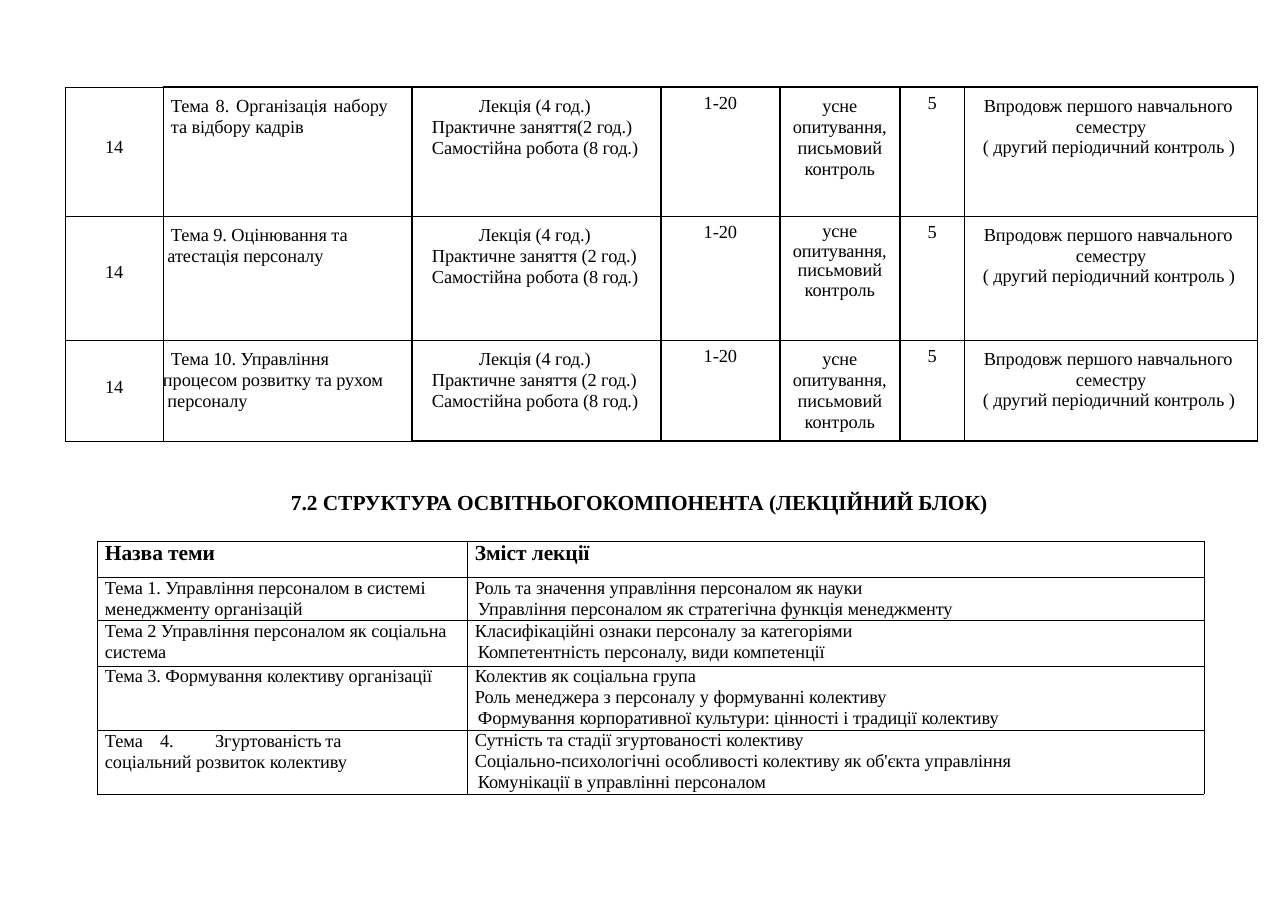
from copy import deepcopy

from lxml.etree import SubElement
from pptx import Presentation
from pptx.dml.color import RGBColor
from pptx.enum.text import PP_ALIGN as Align
from pptx.oxml.ns import qn
from pptx.util import Pt

EMU_PER_PX = 8300
BLACK, WHITE = "000000", "FFFFFF"


def px(length):
    return length * EMU_PER_PX


def color(value):
    return RGBColor.from_string(value)


def para(text, left=0, first=0, right=0, align=Align.LEFT, spacing=Pt(13.8),
         size=12, bold=False, tabs=()):
    """Describe one paragraph; a newline in the text is a line break."""
    return dict(text=text, left=left, first=first, right=right, align=align,
                spacing=spacing, size=size, bold=bold, tabs=tabs)


class SyllabusSlide:
    font = "Times New Roman"
    letter_spacing = "-5"

    def __init__(self, presentation):
        self.slide = presentation.slides.add_slide(presentation.slide_layouts[6])
        background = self.slide.background.fill
        background.solid()
        background.fore_color.rgb = color(WHITE)

    def fill_text(self, frame, paragraphs):
        frame.word_wrap = True
        for index, item in enumerate(paragraphs):
            paragraph = frame.add_paragraph() if index else frame.paragraphs[0]
            paragraph.alignment = item["align"]
            paragraph.line_spacing = item["spacing"]
            properties = paragraph._p.get_or_add_pPr()
            properties.set("marL", str(px(item["left"])))
            properties.set("marR", str(px(item["right"])))
            properties.set("indent", str(px(item["first"])))
            if item["tabs"]:
                tab_list = SubElement(properties, qn("a:tabLst"))
                for position in item["tabs"]:
                    SubElement(tab_list, qn("a:tab"), pos=str(px(position)), algn="l")
            for number, line in enumerate(item["text"].split("\n")):
                if number:
                    paragraph.add_line_break()
                    paragraph._p[-1].append(deepcopy(run._r.rPr))
                run = paragraph.add_run()
                run.text = line
                run.font.name = self.font
                run.font.size = Pt(item["size"])
                run.font.bold = item["bold"]
                run.font.color.rgb = color(BLACK)
                run._r.get_or_add_rPr().set("spc", self.letter_spacing)

    def text(self, left, top, width, height, inset, paragraphs):
        box = self.slide.shapes.add_textbox(px(left), px(top), px(width), px(height))
        frame = box.text_frame
        frame.margin_left = frame.margin_right = frame.margin_bottom = 0
        frame.margin_top = px(inset)
        self.fill_text(frame, paragraphs)

    def border(self, cell, widths):
        properties = cell._tc.get_or_add_tcPr()
        for side, width in zip("LRTB", widths):
            line = SubElement(properties, qn(f"a:ln{side}"), w=str(Pt(width)))
            fill = SubElement(line, qn("a:solidFill"))
            SubElement(fill, qn("a:srgbClr"), val=BLACK)

    def table(self, left, top, columns, heights, rows, borders):
        """Each cell is a pair: top inset and paragraphs."""
        frame = self.slide.shapes.add_table(
            len(heights), len(columns), px(left), px(top),
            px(sum(columns)), px(sum(heights)))
        table = frame.table
        table.first_row = table.horz_banding = False
        for column, width in zip(table.columns, columns):
            column.width = px(width)
        for row, height in zip(table.rows, heights):
            row.height = px(height)
        for r, contents in enumerate(rows):
            for c, (inset, paragraphs) in enumerate(contents):
                cell = table.cell(r, c)
                cell.margin_left = cell.margin_right = cell.margin_bottom = 0
                cell.margin_top = px(inset)
                self.fill_text(cell.text_frame, paragraphs)
                self.border(cell, borders(r, c))
                cell.fill.solid()
                cell.fill.fore_color.rgb = color(WHITE)


def schedule_row(hours_inset, topic, practice, method_inset, method_spacing):
    centred = dict(align=Align.CENTER, spacing=1.0)
    return [
        (hours_inset, [para("14", left=40, spacing=1.0)]),
        (8, [topic]),
        (8, [para(f"Лекція (4 год.)\n{practice}\nСамостійна робота (8 год.)",
                  left=20, first=47)]),
        (6, [para("1-20", **centred)]),
        (method_inset, [para("усне\nопитування,\nписьмовий\nконтроль",
                             align=Align.CENTER, spacing=method_spacing)]),
        (6, [para("5", **centred)]),
        (8, [para("Впродовж першого навчального\nсеместру", left=111, first=-92),
             para("( другий періодичний контроль )", left=18, spacing=Pt(13.4))]),
    ]


def schedule_borders(row, column):
    if column == 0:
        return 0.5, 0.5, 0.5, 0.5
    return (0.5 if column == 1 else 1, 1, 0.5 if row else 1,
            1 if row == 2 and column > 1 else 0.5)


def lecture_borders(row, column):
    return 0.5, 0.5, 0.5, 0.5


def lecture_cell(text, **style):
    return 0, [para(text, **{"left": 8, **style})]


def main():
    presentation = Presentation()
    presentation.slide_width, presentation.slide_height = px(1288), px(911)
    page = SyllabusSlide(presentation)

    # Schedule of topics 8 to 10
    topic_8 = para("Тема 8. Організація набору та відбору кадрів",
                   left=8, right=24, align=Align.JUSTIFY)
    topic_9 = para("Тема 9. Оцінювання та\n атестація персоналу", first=8)
    topic_10 = para("Тема 10. Управління\nпроцесом розвитку та рухом\n персоналу",
                    first=8)
    exact = Pt(13.8)
    page.table(
        65, 87, [98, 249, 249, 119, 120, 65, 293], [129, 124, 101],
        [schedule_row(50, topic_8, "Практичне заняття(2 год.)", 8, exact),
         schedule_row(46, topic_9, "Практичне заняття (2 год.)", 6, 0.96),
         schedule_row(37, topic_10, "Практичне заняття (2 год.)", 8, exact)],
        schedule_borders)

    # Section heading
    page.text(290, 488, 709, 28, 1, [
        para("7.2 СТРУКТУРА ОСВІТНЬОГОКОМПОНЕНТА (ЛЕКЦІЙНИЙ БЛОК)",
             left=1, spacing=1.0, size=14, bold=True)])

    # Lecture contents
    header = dict(spacing=Pt(16), size=14, bold=True)
    hanging = dict(left=11, first=-3)
    page.table(
        97, 541, [370, 737], [36, 43, 46, 64, 64],
        [[lecture_cell("Назва теми", **header), lecture_cell("Зміст лекції", **header)],
         [lecture_cell("Тема 1. Управління персоналом в системі\nменеджменту організацій"),
          lecture_cell("Роль та значення управління персоналом як науки\n"
                       "Управління персоналом як стратегічна функція менеджменту",
                       **hanging)],
         [lecture_cell("Тема 2 Управління персоналом як соціальна\nсистема"),
          lecture_cell("Класифікаційні ознаки персоналу за категоріями\n"
                       "Компетентність персоналу, види компетенції", **hanging)],
         [lecture_cell("Тема 3. Формування колективу організації", spacing=Pt(13.4)),
          (0, [para("Колектив як соціальна група", left=8, spacing=Pt(13.2)),
               para("Роль менеджера з персоналу у формуванні колективу", left=8),
               para("Формування корпоративної культури: цінності і традиції колективу",
                    left=11, spacing=Pt(13.9))])],
         [lecture_cell("Тема\t4.\tЗгуртованість\tта\nсоціальний розвиток колективу",
                       tabs=(69, 105, 236)),
          (0, [para("Сутність та стадії згуртованості колективу",
                    left=8, spacing=Pt(13.2)),
               para("Соціально-психологічні особливості колективу як об'єкта управління\n"
                    "Комунікації в управлінні персоналом", **hanging)])]],
        lecture_borders)

    presentation.save("out.pptx")


if __name__ == "__main__":
    main()
